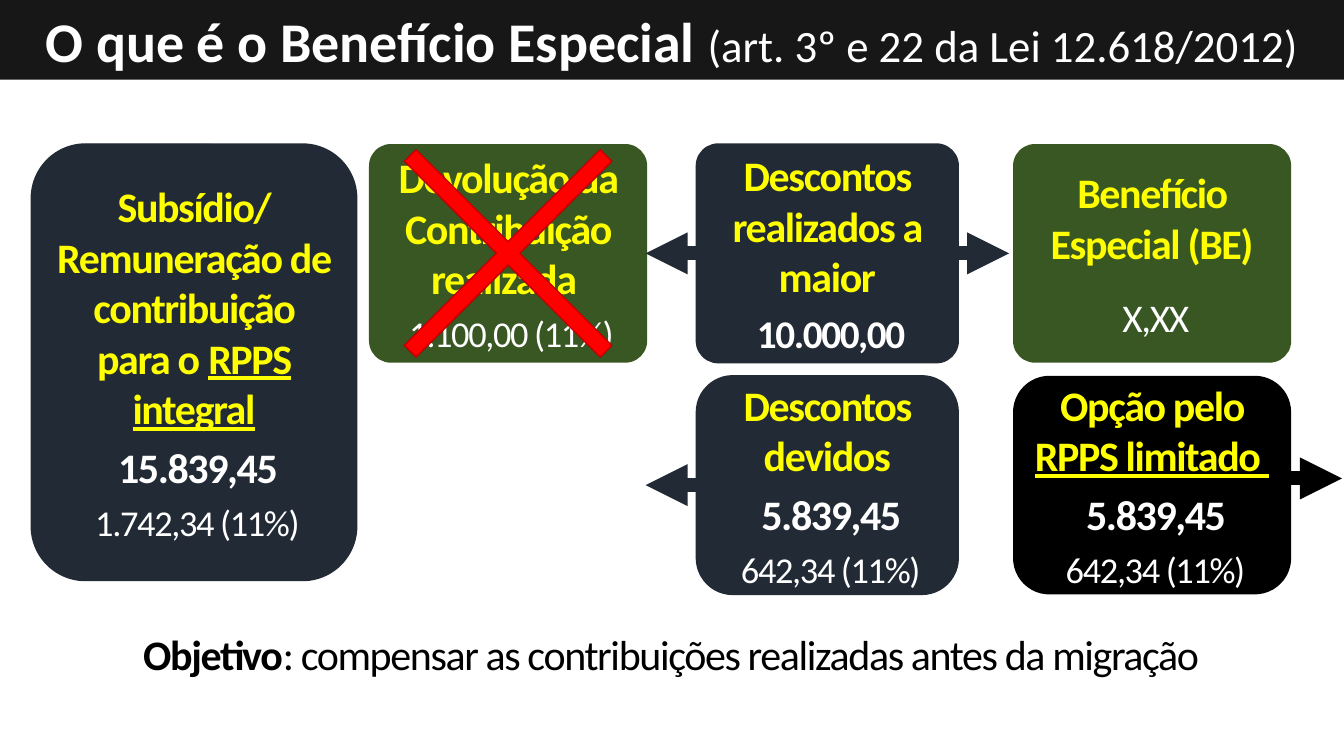
from collections import namedtuple

from lxml import etree
from pptx import Presentation
from pptx.dml.color import RGBColor
from pptx.enum.shapes import MSO_CONNECTOR, MSO_SHAPE
from pptx.enum.text import MSO_ANCHOR, MSO_AUTO_SIZE, PP_ALIGN
from pptx.oxml.ns import qn
from pptx.util import Cm, Pt

ROUNDED = MSO_SHAPE.ROUNDED_RECTANGLE
PLUS = MSO_SHAPE.MATH_PLUS
STRAIGHT = MSO_CONNECTOR.STRAIGHT
MIDDLE = MSO_ANCHOR.MIDDLE
NO_FIT = MSO_AUTO_SIZE.NONE
CENTER = PP_ALIGN.CENTER

NAVY = RGBColor(0x22, 0x2A, 0x35)
GREEN = RGBColor(0x38, 0x57, 0x23)
BLACK = RGBColor(0, 0, 0)
CHARCOAL = RGBColor(0x18, 0x17, 0x17)
WHITE = RGBColor(0xFF, 0xFF, 0xFF)
YELLOW = RGBColor(0xFF, 0xFF, 0)
RED = RGBColor(0xFF, 0, 0)
DARK_RED = RGBColor(0xC0, 0, 0)

TITLE_ONLY = 5
SLIDE_WIDTH, SLIDE_HEIGHT = 33.87, 19.05
TOP_ROW, BOTTOM_ROW = 3.63, 9.47
ROW_HEIGHT = 5.51
SLIGHT_ROUNDING = 0.1

Box = namedtuple("Box", "left top width height")


def lengths(box):
    """Return the box as four centimetre lengths."""
    return [Cm(value) for value in box]


def write(para, text, size=30, color=YELLOW, bold=True, underline=False, spacing=-100):
    """Add one formatted span of text to a paragraph."""
    span = para.add_run()
    span.text = text
    span.font.name = "Calibri"
    span.font.size = Pt(size)
    span.font.color.rgb = color
    span.font.bold = bold
    span.font.underline = underline
    if spacing:
        span.font._element.set("spc", str(spacing))


def centered(frame, index, space_after=6):
    """Return a centred paragraph, the first one being already in the frame."""
    para = frame.add_paragraph() if index else frame.paragraphs[0]
    para.alignment = CENTER
    para.space_after = Pt(space_after)
    return para


def add_title(page, box):
    """Place the title band across the top."""
    title = page.shapes.title
    title.left, title.top, title.width, title.height = lengths(box)
    title.fill.solid()
    title.fill.fore_color.rgb = CHARCOAL
    frame = title.text_frame
    frame.word_wrap = True
    frame.auto_size = NO_FIT
    frame.vertical_anchor = MIDDLE
    para = centered(frame, 0, space_after=0)
    write(para, "O que é o Benefício Especial ", size=40, color=WHITE, spacing=0)
    write(para, "(art. 3º e 22 da Lei 12.618/2012)", size=32, color=WHITE,
          bold=False, spacing=0)


def add_card(page, box, fill, heading, values, underlined="", rounding=None, heading_gap=6):
    """Place a rounded card with a yellow heading and (text, size, bold) values."""
    card = page.shapes.add_shape(ROUNDED, *lengths(box))
    card.shadow.inherit = False
    card.fill.solid()
    card.fill.fore_color.rgb = fill
    if fill == NAVY:
        card.line.color.rgb = NAVY
        card.line.width = Pt(1)
    else:
        card.line.fill.background()
    if rounding:
        card.adjustments[0] = rounding
    frame = card.text_frame
    frame.word_wrap = True
    frame.vertical_anchor = MIDDLE
    para = centered(frame, 0, heading_gap)
    write(para, heading)
    if underlined:
        write(para, underlined, underline=True)
    for index, (text, size, bold) in enumerate(values, start=1):
        write(centered(frame, index), text, size=size, color=WHITE, bold=bold)


def add_side_arrow(page, box, color, to_right, rise=0.0, length=1.28):
    """Draw a short arrow outwards from one side of a box."""
    start = box.left + box.width if to_right else box.left
    end = start + length if to_right else start - length
    height = Cm(box.top + box.height / 2 - rise)
    arrow = page.shapes.add_connector(STRAIGHT, Cm(start), height, Cm(end), height)
    arrow.line.color.rgb = color
    arrow.line.width = Pt(10)
    etree.SubElement(arrow.line._get_or_add_ln(), qn("a:tailEnd"), type="triangle")
    etree.SubElement(arrow._element.spPr, qn("a:effectLst"))


def add_cross(page, box, size=9.5):
    """Cross out a box with a rotated plus sign."""
    left = box.left + (box.width - size) / 2
    top = box.top + (box.height - size) / 2
    cross = page.shapes.add_shape(PLUS, *lengths((left, top, size, size)))
    cross.adjustments[0] = 0.044
    cross.rotation = 45
    cross.shadow.inherit = False
    cross.fill.solid()
    cross.fill.fore_color.rgb = RED
    cross.line.color.rgb = DARK_RED
    cross.line.width = Pt(1)


def add_goal(page, box):
    """Place the closing sentence."""
    frame = page.shapes.add_textbox(*lengths(box)).text_frame
    frame.word_wrap = True
    para = centered(frame, 0)
    write(para, "Objetivo", color=BLACK)
    write(para, ": compensar as contribuições realizadas antes da migração",
          color=BLACK, bold=False)


def add_diagram(page):
    """Place the cards, their arrows and the cross."""
    salary = Box(0.79, TOP_ROW, 8.2, 11)
    refund = Box(9.3, TOP_ROW, 7.01, ROW_HEIGHT)
    excess = Box(17.55, TOP_ROW, 6.6, ROW_HEIGHT)
    due = excess._replace(top=BOTTOM_ROW)
    benefit = Box(25.53, TOP_ROW, 7.01, ROW_HEIGHT)
    limited = benefit._replace(top=BOTTOM_ROW)
    limited_values = [(" 5.839,45", 30, True), (" 642,34 (11%)", 26, False)]

    add_card(page, salary, NAVY, "Subsídio/ Remuneração de contribuição para o ",
             [(" 15.839,45", 30, True), (" 1.742,34 (11%)", 26, False)],
             underlined="RPPS integral")
    add_card(page, refund, GREEN, "Devolução da Contribuição realizada ",
             [(" 1.100,00 (11%)", 26, False)], rounding=SLIGHT_ROUNDING)
    add_card(page, excess, NAVY, "Descontos realizados a maior",
             [(" 10.000,00", 28, True)], rounding=SLIGHT_ROUNDING)
    add_card(page, due, NAVY, "Descontos devidos", limited_values)
    add_card(page, benefit, GREEN, "Benefício Especial (BE)",
             [(" X,XX", 28, False)], rounding=SLIGHT_ROUNDING, heading_gap=18)
    add_card(page, limited, BLACK, "Opção pelo ", limited_values,
             underlined="RPPS limitado ")

    add_side_arrow(page, excess, NAVY, to_right=True)
    add_side_arrow(page, excess, NAVY, to_right=False)
    add_side_arrow(page, due, NAVY, to_right=False)
    add_side_arrow(page, limited, BLACK, to_right=True, rise=0.17)
    add_cross(page, refund)


def main():
    """Build and save the deck."""
    deck = Presentation()
    deck.slide_width, deck.slide_height = Cm(SLIDE_WIDTH), Cm(SLIDE_HEIGHT)
    page = deck.slides.add_slide(deck.slide_layouts[TITLE_ONLY])
    add_title(page, Box(0, 0, SLIDE_WIDTH, 2.01))
    add_diagram(page)
    add_goal(page, Box(1.32, 15.72, 31.19, 1.55))
    deck.save("out.pptx")


if __name__ == "__main__":
    main()
